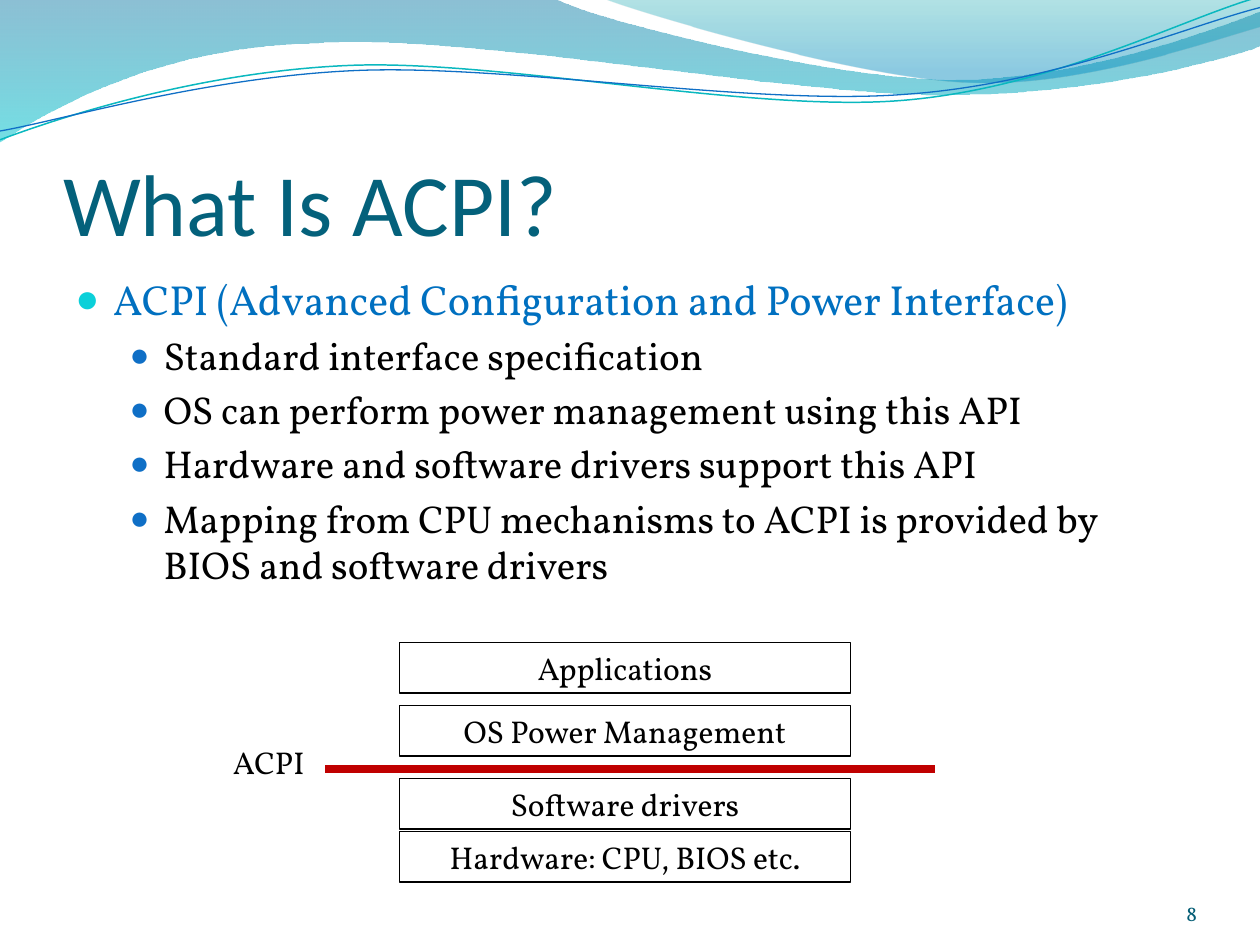
from lxml import etree
from pptx import Presentation
from pptx import util as u
from pptx.dml.color import RGBColor
from pptx.enum import shapes, text
from pptx.oxml.ns import qn

COLORS = {
    "title": "04617B", "heading": "0070C0", "text": "000000",
    "number": "045D75", "bullet": "0BD0D9", "sub_bullet": "0F6FC6",
    "bar": "C00000", "wave_top": "0074A1", "wave_end": "00C6CF",
    "crest_top": "00A1A9", "crest_end": "008BBF",
    "teal_line": "0AB8BF", "blue_line": "0F6FC6",
}


def rgb(name):
    return RGBColor.from_string(COLORS[name])


def write(p, content, font="Vollkorn", size=18, color="text", align=text.PP_ALIGN.LEFT):
    p.alignment = align
    r = p.add_run()
    r.text = content
    r.font.name, r.font.size = font, u.Pt(size)
    r.font.color.rgb = rgb(color)


def add_bullet(p, left, hang, color, percent):
    pPr = p._p.get_or_add_pPr()
    pPr.set("marL", str(u.Inches(left)))
    pPr.set("indent", str(-u.Inches(hang)))
    clr = etree.SubElement(pPr, qn("a:buClr"))
    etree.SubElement(clr, qn("a:srgbClr"), val=COLORS[color])
    etree.SubElement(pPr, qn("a:buSzPct"), val=str(percent * 1000))
    etree.SubElement(pPr, qn("a:buFont"), typeface="Arial")
    etree.SubElement(pPr, qn("a:buChar"), char="●")


class Deck:
    def __init__(self, prs):
        self.prs = prs
        self.s = None

    def new_slide(self):
        self.s = self.prs.slides.add_slide(self.prs.slide_layouts[5])

    def freeform(self, start, segments, close):
        """Segments of 2 numbers are lines, of 6 numbers cubic curves."""
        points = [(u.Inches(x), u.Inches(y))
                  for seg in segments for x, y in zip(seg[::2], seg[1::2])]
        builder = self.s.shapes.build_freeform(*map(u.Inches, start))
        builder.add_line_segments(points, close=close)
        sp = builder.convert_to_shape()
        sp.shadow.inherit = False
        # Join the three points of each curve into one Bezier segment
        lines = iter(list(sp._element.iter(qn("a:lnTo"))))
        for seg in segments:
            first = next(lines)
            if len(seg) == 6:
                bezier = etree.Element(qn("a:cubicBezTo"))
                first.addprevious(bezier)
                for line in (first, next(lines), next(lines)):
                    bezier.append(line[0])
                    line.getparent().remove(line)
        return sp

    def wave(self, start, segments, stops):
        sp = self.freeform(start, segments, True)
        sp.line.fill.background()
        sp.fill.gradient()
        sp.fill.gradient_angle = 270
        for stop, (position, color, opacity) in zip(sp.fill.gradient_stops, stops):
            stop.position = position
            stop.color.rgb = rgb(color)
        for clr, (_, _, opacity) in zip(sp._element.spPr.iter(qn("a:srgbClr")), stops):
            etree.SubElement(clr, qn("a:alpha"), val=str(opacity * 1000))

    def strand(self, start, segments, color, width):
        sp = self.freeform(start, segments, False)
        sp.fill.background()
        sp.line.color.rgb = rgb(color)
        sp.line.width = u.Pt(width)

    def title(self, content, box):
        sp = self.s.shapes.title
        sp.left, sp.top, sp.width, sp.height = map(u.Inches, box)
        tf = sp.text_frame
        tf.auto_size = text.MSO_AUTO_SIZE.NONE
        tf.vertical_anchor = text.MSO_ANCHOR.BOTTOM
        tf.margin_left = tf.margin_right = tf.margin_bottom = 0
        tf.margin_top = u.Inches(0.05)
        write(tf.paragraphs[0], content, font="Calibri", size=50, color="title")

    def textbox(self, box):
        tf = self.s.shapes.add_textbox(*map(u.Inches, box)).text_frame
        tf.word_wrap = True
        return tf

    def label(self, content, box):
        write(self.textbox(box).paragraphs[0], content)

    def bullets(self, heading, items, box):
        tf = self.textbox(box)
        for i, item in enumerate([heading] + items):
            p = tf.add_paragraph() if i else tf.paragraphs[0]
            p.space_before = u.Pt(4.4)
            if i:
                p.level = 1
                add_bullet(p, 0.7, 0.27, "sub_bullet", 85)
                write(p, item, size=22.2)
            else:
                add_bullet(p, 0.3, 0.3, "bullet", 95)
                write(p, item, size=24, color="heading")

    def layer(self, content, box):
        sp = self.s.shapes.add_shape(shapes.MSO_SHAPE.RECTANGLE, *map(u.Inches, box))
        sp.shadow.inherit = False
        sp.fill.background()
        sp.line.color.rgb = rgb("text")
        sp.line.width = u.Pt(0.75)
        tf = sp.text_frame
        tf.word_wrap = True
        tf.vertical_anchor = text.MSO_ANCHOR.TOP
        write(tf.paragraphs[0], content, align=text.PP_ALIGN.CENTER)

    def bar(self, x1, x2, y):
        line = self.s.shapes.add_connector(
            shapes.MSO_CONNECTOR.STRAIGHT, *map(u.Inches, (x1, y, x2, y)))
        line.line.color.rgb = rgb("bar")
        line.line.width = u.Pt(4.5)
        etree.SubElement(line._element.spPr, qn("a:effectLst"))

    def number(self, content, box):
        tf = self.textbox(box)
        tf.margin_left = tf.margin_top = tf.margin_right = tf.margin_bottom = 0
        tf.vertical_anchor = text.MSO_ANCHOR.BOTTOM
        write(tf.paragraphs[0], content, size=12, color="number",
              align=text.PP_ALIGN.RIGHT)


def main():
    prs = Presentation()
    prs.slide_width, prs.slide_height = u.Inches(10), u.Inches(7.5)
    deck = Deck(prs)
    deck.new_slide()

    # Wave decoration
    deck.wave((0, 0), [(4.4, -0.01), (4.76, 0.17, 6.64, 0.63, 7.58, 0.63),
                       (8.53, 0.63, 9.58, 0.26, 10, 0.09), (10.01, 0.36),
                       (9.83, 0.44, 8.7, 0.76, 7.46, 0.75),
                       (6.22, 0.75, 3.82, 0.28, 2.57, 0.34),
                       (1.29, 0.36, 0.46, 0.83, -0.01, 1.13)],
              [(0, "wave_top", 45), (1, "wave_end", 55)])
    deck.wave((4.79, -0.01), [(5.09, 0.11, 6.82, 0.62, 7.69, 0.65),
                              (8.56, 0.69, 9.61, 0.32, 10, 0.21), (10, 0)],
              [(0, "crest_top", 30), (0.8, "crest_end", 45)])
    deck.strand((0, 1.11), [(0.48, 0.93, 1.58, 0.57, 2.77, 0.52),
                            (3.95, 0.47, 5.93, 0.89, 7.13, 0.8),
                            (8.33, 0.71, 9.38, 0.15, 9.98, -0.02)], "teal_line", 0.85)
    deck.strand((0, 1.04), [(0.47, 0.96, 1.64, 0.61, 2.83, 0.56),
                            (4.03, 0.51, 5.97, 0.84, 7.17, 0.75),
                            (8.36, 0.67, 9.41, 0.21, 10, 0.06)], "blue_line", 0.75)

    # Title and bullets
    deck.title("What Is ACPI?", (0.5, 0.77, 9, 1.25))
    deck.bullets("ACPI (Advanced Configuration and Power Interface)", [
        "Standard interface specification",
        "OS can perform power management using this API",
        "Hardware and software drivers support this API",
        "Mapping from CPU mechanisms to ACPI is provided by BIOS and software drivers",
    ], (0.5, 2.12, 9, 2.38))

    # Layer diagram, split by the ACPI bar
    for top, name in [(5.1, "Applications"), (5.6, "OS Power Management"),
                      (6.18, "Software drivers"), (6.6, "Hardware: CPU, BIOS etc.")]:
        deck.layer(name, (3.17, top, 3.58, 0.4))
    deck.bar(2.58, 7.42, 6.1)
    deck.label("ACPI", (1.75, 5.85, 1.08, 0.42))

    # Slide number
    deck.number("8", (8.67, 6.95, 0.83, 0.4))

    prs.save("out.pptx")


if __name__ == "__main__":
    main()
